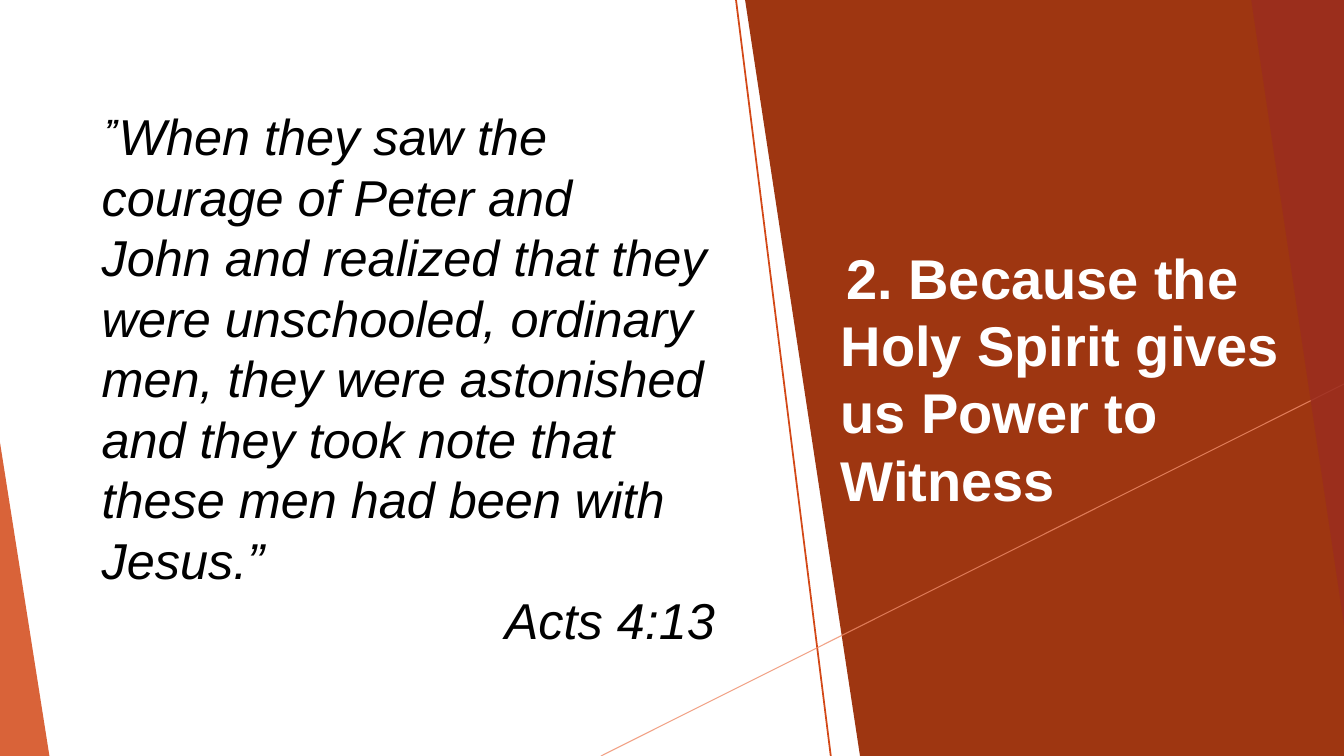
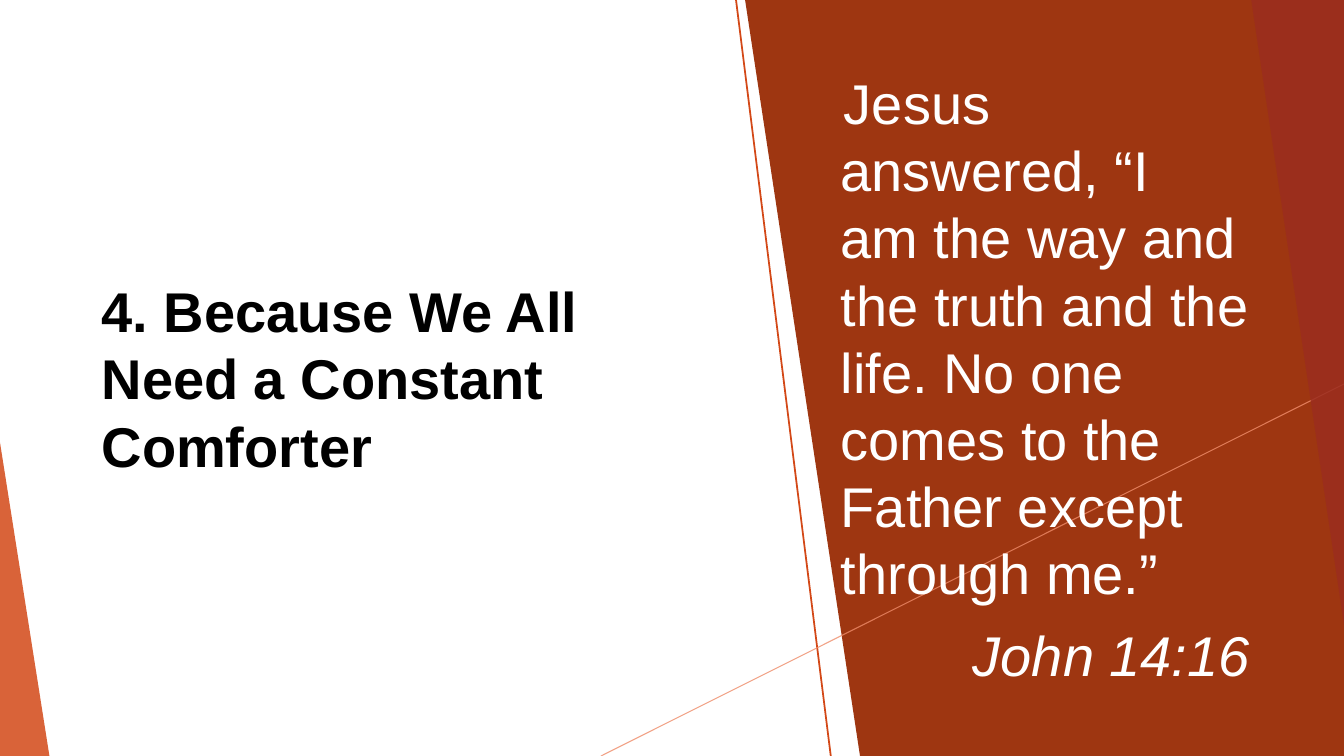
from dataclasses import dataclass

import pptx
import pptx.dml.color
import pptx.enum.shapes
import pptx.enum.text
import pptx.oxml
import pptx.oxml.ns
import pptx.util
from pptx.util import Inches

WIDTH, HEIGHT = 13.33, 7.5
WHITE, BLACK, GREY = "FFFFFF", "000000", "808080"
ORANGE, PEACH, RUST, BRICK = "D34817", "EF8C6A", "9E3611", "9B2D1F"
LINE_PITCH = 1.2
NBSP = chr(160)


@dataclass(frozen=True)
class Frame:
    left: float
    top: float
    width: float
    height: float

    def lengths(self) -> list[int]:
        return [Inches(value) for value in (self.left, self.top, self.width, self.height)]


@dataclass(frozen=True)
class Triangle:
    frame: Frame
    color: str
    opacity: int
    rotation: float = 0


@dataclass(frozen=True)
class Rule:
    start: tuple[float, float]
    end: tuple[float, float]
    color: str
    weight: float
    opacity: int = 100


@dataclass(frozen=True)
class Span:
    text: str
    size: float | None = None
    font: str | None = None
    color: str | None = None
    bold: bool | None = None
    raised: bool = False


@dataclass(frozen=True)
class Para:
    spans: tuple[Span, ...]
    size: float
    color: str
    bold: bool = False
    italic: bool = False
    indent: float = 0
    space_before: float = 0


@dataclass(frozen=True)
class Page:
    main: tuple[Para, ...]
    side: tuple[Para, ...]
    side_width: float


PANEL = ((7.39, 0), (WIDTH, 0), (WIDTH, HEIGHT), (8.53, HEIGHT))
LEFT_TRIANGLE = Triangle(Frame(0, 4.39, 0.49, 3.11), ORANGE, 85)
RIGHT_TRIANGLE = Triangle(Frame(12.41, 0, 0.92, 6.2), BRICK, 85, rotation=180)
RULES = (
    Rule((7.3, 0), (8.24, HEIGHT), ORANGE, 1.25),
    Rule((WIDTH, 3.81), (5.96, HEIGHT), PEACH, 0.75, 80),
)
MAIN_FRAME = Frame(0.91, 0.93, 6.34, 5.63)

PAGES = (
    Page(
        main=(
            Para(
                (
                    Span(NBSP, size=10.8, bold=True, raised=True),
                    Span("”", bold=True, raised=True),
                    Span(f"When they saw the courage of Peter and John{NBSP}and realized "
                         f"that they were unschooled, ordinary men,{NBSP}they were astonished "
                         "and they took note that these men had been with Jesus.”"),
                ),
                36, BLACK, italic=True,
            ),
            Para((Span("Acts 4:13"),), 36, BLACK, italic=True, indent=4),
        ),
        side=(
            Para(
                (
                    Span(" ", size=18, font="Cabin", color=GREY),
                    Span("2. Because the Holy Spirit gives us Power to Witness"),
                ),
                40, WHITE, bold=True, space_before=10,
            ),
        ),
        side_width=4.84,
    ),
    Page(
        main=(Para((Span("4. Because We All Need a Constant Comforter"),), 40, BLACK, bold=True),),
        side=(
            Para(
                (
                    Span(NBSP, size=18, font="Cabin", color=GREY, bold=True, raised=True),
                    Span(f"Jesus answered,{NBSP}“I am{NBSP}the way{NBSP}and the truth{NBSP}and "
                         f"the life.{NBSP}No one comes to the Father except through me.”"),
                ),
                40, WHITE, space_before=10,
            ),
            Para((Span("John 14:16"),), 40, WHITE, italic=True, indent=1.31, space_before=10),
        ),
        side_width=4.66,
    ),
)


def rgb(color: str) -> pptx.dml.color.RGBColor:
    return pptx.dml.color.RGBColor.from_string(color)


def paint(fill, color: str, opacity: int = 100) -> None:
    fill.solid()
    fill.fore_color.rgb = rgb(color)
    if opacity < 100:
        element = fill._xPr.find(".//" + pptx.oxml.ns.qn("a:srgbClr"))
        alpha = pptx.oxml.parse_xml(
            f'<a:alpha {pptx.oxml.ns.nsdecls("a")} val="{opacity * 1000}"/>'
        )
        element.append(alpha)


def finish_shape(shape, color: str, opacity: int = 100) -> None:
    shape.shadow.inherit = False
    paint(shape.fill, color, opacity)
    shape.line.fill.background()


def draw_panel(slide) -> None:
    corners = [(Inches(x), Inches(y)) for x, y in PANEL]
    builder = slide.shapes.build_freeform(*corners[0])
    builder.add_line_segments(corners[1:], close=True)
    finish_shape(builder.convert_to_shape(), RUST)


def draw_triangle(slide, triangle: Triangle) -> None:
    shape = slide.shapes.add_shape(
        pptx.enum.shapes.MSO_SHAPE.ISOSCELES_TRIANGLE, *triangle.frame.lengths()
    )
    shape.adjustments[0] = 0
    shape.rotation = triangle.rotation
    finish_shape(shape, triangle.color, triangle.opacity)


def draw_rule(slide, rule: Rule) -> None:
    ends = [Inches(value) for value in rule.start + rule.end]
    connector = slide.shapes.add_connector(pptx.enum.shapes.MSO_CONNECTOR.STRAIGHT, *ends)
    connector.line.width = pptx.util.Pt(rule.weight)
    paint(connector.line.fill, rule.color, rule.opacity)
    effects = pptx.oxml.parse_xml(f'<a:effectLst {pptx.oxml.ns.nsdecls("a")}/>')
    connector._element.spPr.append(effects)


def write_span(paragraph, span: Span) -> None:
    run = paragraph.add_run()
    run.text = span.text
    if span.size is not None:
        run.font.size = pptx.util.Pt(span.size)
    if span.font is not None:
        run.font.name = span.font
    if span.color is not None:
        run.font.color.rgb = rgb(span.color)
    if span.bold is not None:
        run.font.bold = span.bold
    if span.raised:
        run._r.get_or_add_rPr().set("baseline", "30000")


def write_para(paragraph, para: Para) -> None:
    paragraph.alignment = pptx.enum.text.PP_ALIGN.LEFT
    paragraph.line_spacing = pptx.util.Pt(para.size * LINE_PITCH)
    paragraph.space_before = pptx.util.Pt(para.space_before)
    if para.indent:
        properties = paragraph._p.get_or_add_pPr()
        properties.set("marL", str(Inches(para.indent)))
        properties.set("indent", "0")
    paragraph.font.name = "Arial"
    paragraph.font.size = pptx.util.Pt(para.size)
    paragraph.font.bold = para.bold
    paragraph.font.italic = para.italic
    paragraph.font.color.rgb = rgb(para.color)
    for span in para.spans:
        write_span(paragraph, span)


def write_box(slide, frame: Frame, paras: tuple[Para, ...]) -> None:
    box = slide.shapes.add_textbox(*frame.lengths())
    text = box.text_frame
    text.word_wrap = True
    text.vertical_anchor = pptx.enum.text.MSO_ANCHOR.MIDDLE
    for index, para in enumerate(paras):
        write_para(text.add_paragraph() if index else text.paragraphs[0], para)


def draw_page(deck, page: Page) -> None:
    slide = deck.slides.add_slide(deck.slide_layouts[6])
    draw_triangle(slide, LEFT_TRIANGLE)
    draw_panel(slide)
    for rule in RULES:
        draw_rule(slide, rule)
    write_box(slide, Frame(8.24, 2.07, page.side_width, 3.36), page.side)
    draw_triangle(slide, RIGHT_TRIANGLE)
    write_box(slide, MAIN_FRAME, page.main)


def main() -> None:
    deck = pptx.Presentation()
    deck.slide_width = Inches(WIDTH)
    deck.slide_height = Inches(HEIGHT)
    for page in PAGES:
        draw_page(deck, page)
    deck.save("out.pptx")


if __name__ == "__main__":
    main()
